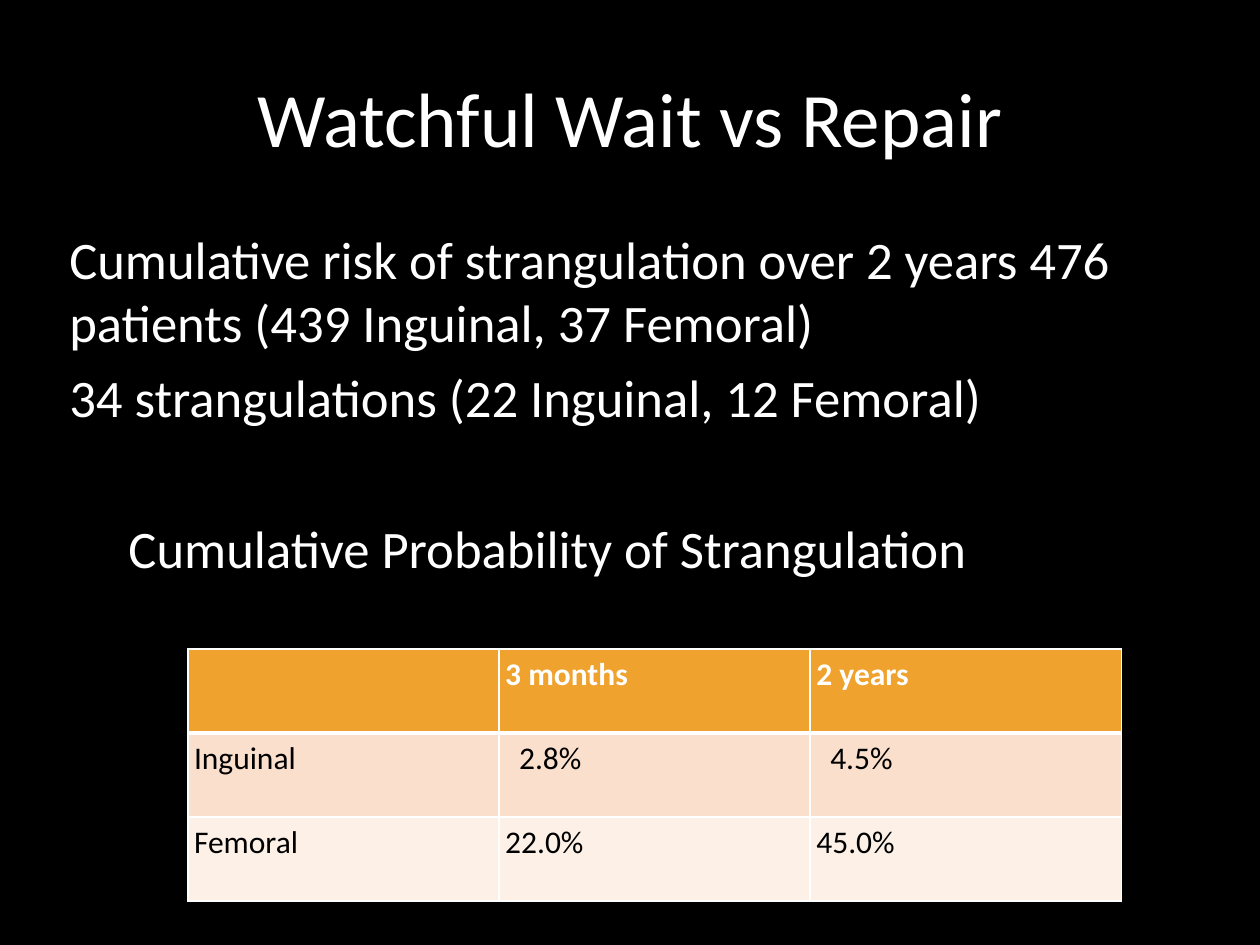
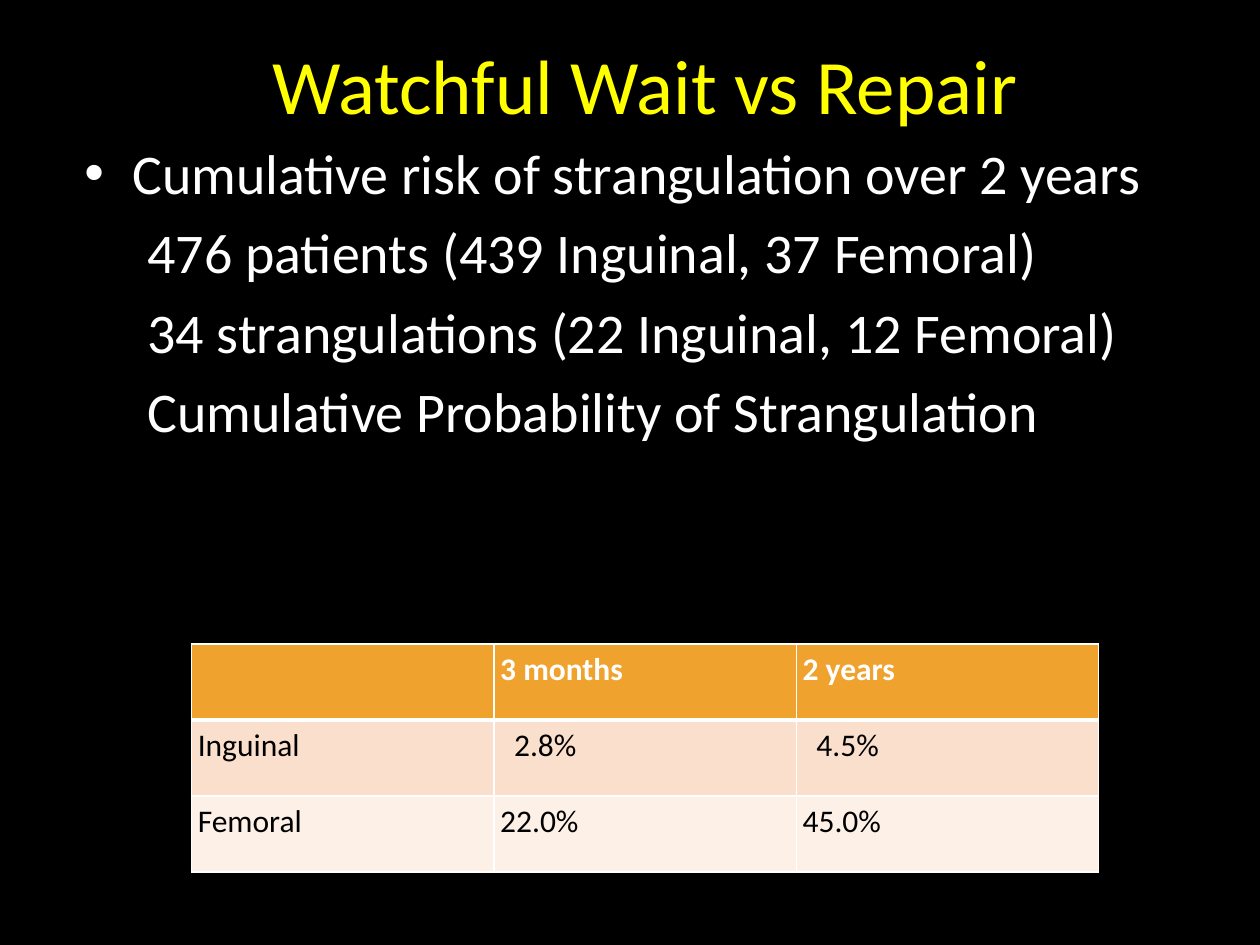
from lxml import etree
from pptx import Presentation
from pptx.dml.color import RGBColor
from pptx.enum.text import MSO_ANCHOR, PP_ALIGN
from pptx.oxml.ns import qn
from pptx.util import Inches, Pt

CENTER, LEFT = PP_ALIGN.CENTER, PP_ALIGN.LEFT
MIDDLE, TOP = MSO_ANCHOR.MIDDLE, MSO_ANCHOR.TOP

COLORS = {"back": "000000", "white": "FFFFFF", "yellow": "FFFF00",
          "header": "F0A22E", "band": "F9DFCC", "pale": "FCF0E7", "dark": "000000"}
FONT = "Calibri"
INSET = 0.05
DIGIT_INDENT = 0.11
SPACE = 7
TITLE = "Watchful Wait vs Repair"
PROBABILITY = "Cumulative Probability of Strangulation"
STRANGULATIONS = "34 strangulations (22 Inguinal, 12 Femoral)"

RISKS = [["", "3 months", "2 years"],
         ["Inguinal", "2.8%", "4.5%"],
         ["Femoral", "22.0%", "45.0%"]]
ROW_STYLES = [("header", "white", True), ("band", "dark", False), ("pale", "dark", False)]

SLIDES = [
    {"title_at": (0.5, 0.3, 9, 1.25), "title_color": "white",
     "body_at": (0.5, 1.75, 8.73, 2.87), "size": 30.1,
     "lines": [
         {"text": "Cumulative risk of strangulation over 2 years 476 patients "
                  "(439 Inguinal, 37 Femoral)"},
         {"text": STRANGULATIONS},
         {"text": PROBABILITY, "left": 0.47, "before": 50}],
     "table_at": (1.49, 5.15, 7.41, 2)},
    {"title_at": (0.62, 0.04, 9, 1.25), "title_color": "yellow",
     "body_at": (0.62, 1.05, 9, 4.95), "size": 32,
     "lines": [
         {"text": "Cumulative risk of strangulation over 2 years", "left": 0.38, "bullet": "•"},
         {"text": "476 patients (439 Inguinal, 37 Femoral)", "left": 0.5},
         {"text": STRANGULATIONS, "left": 0.5},
         {"text": PROBABILITY, "left": 0.5}],
     "table_at": (1.52, 5.11, 7.2, 1.81)},
]


def rgb(name):
    return RGBColor.from_string(COLORS[name])


def assign(target, values):
    for key, value in values.items():
        setattr(target, key, value)


def margins(left=INSET):
    values = {f"margin_{side}": Inches(INSET) for side in ("right", "top", "bottom")}
    return {"margin_left": Inches(left), **values}


def write(p, text, size, color, bold=False):
    r = p.add_run()
    r.text = text
    assign(r.font, {"name": FONT, "size": Pt(size), "bold": bold})
    r.font.color.rgb = rgb(color)


def add_text(slide, at, lines, size, color, align=LEFT, anchor=TOP):
    tf = slide.shapes.add_textbox(*map(Inches, at)).text_frame
    assign(tf, {"word_wrap": True, "vertical_anchor": anchor, **margins()})
    for i, line in enumerate(lines):
        p = tf.add_paragraph() if i else tf.paragraphs[0]
        assign(p, {"alignment": align, "space_before": Pt(line.get("before", SPACE))})
        left = Inches(line.get("left", 0))
        pPr = p._p.get_or_add_pPr()
        pPr.set("marL", str(left))
        if "bullet" in line:
            pPr.set("indent", str(-left))
            etree.SubElement(pPr, qn("a:buFont"), typeface="Arial")
            etree.SubElement(pPr, qn("a:buChar"), char=line["bullet"])
        write(p, line["text"], size, color)


def add_borders(cell, row):
    widths = {"L": 1, "R": 1, "T": 3 if row == 1 else 1, "B": 3 if row == 0 else 1}
    tcPr = cell._tc.get_or_add_tcPr()
    for side, width in widths.items():
        ln = etree.SubElement(tcPr, qn(f"a:ln{side}"), w=str(Pt(width)))
        fill = etree.SubElement(ln, qn("a:solidFill"))
        etree.SubElement(fill, qn("a:srgbClr"), val=COLORS["white"])


def add_risk_table(slide, at):
    table = slide.shapes.add_table(len(RISKS), len(RISKS[0]), *map(Inches, at)).table
    for i, (values, (fill, color, bold)) in enumerate(zip(RISKS, ROW_STYLES)):
        for j, value in enumerate(values):
            cell = table.cell(i, j)
            short = value.endswith("%") and len(value) == 4
            assign(cell, margins(INSET + DIGIT_INDENT if short else INSET))
            add_borders(cell, i)
            cell.fill.solid()
            cell.fill.fore_color.rgb = rgb(fill)
            if value:
                write(cell.text_frame.paragraphs[0], value, 18, color, bold)


def main():
    prs = Presentation()
    assign(prs, {"slide_width": Inches(10), "slide_height": Inches(7.5)})
    for content in SLIDES:
        slide = prs.slides.add_slide(prs.slide_layouts[6])
        slide.background.fill.solid()
        slide.background.fill.fore_color.rgb = rgb("back")
        add_text(slide, content["title_at"], [{"text": TITLE, "before": 0}], 44,
                 content["title_color"], CENTER, MIDDLE)
        add_text(slide, content["body_at"], content["lines"], content["size"], "white")
        add_risk_table(slide, content["table_at"])
    prs.save("out.pptx")


if __name__ == "__main__":
    main()
